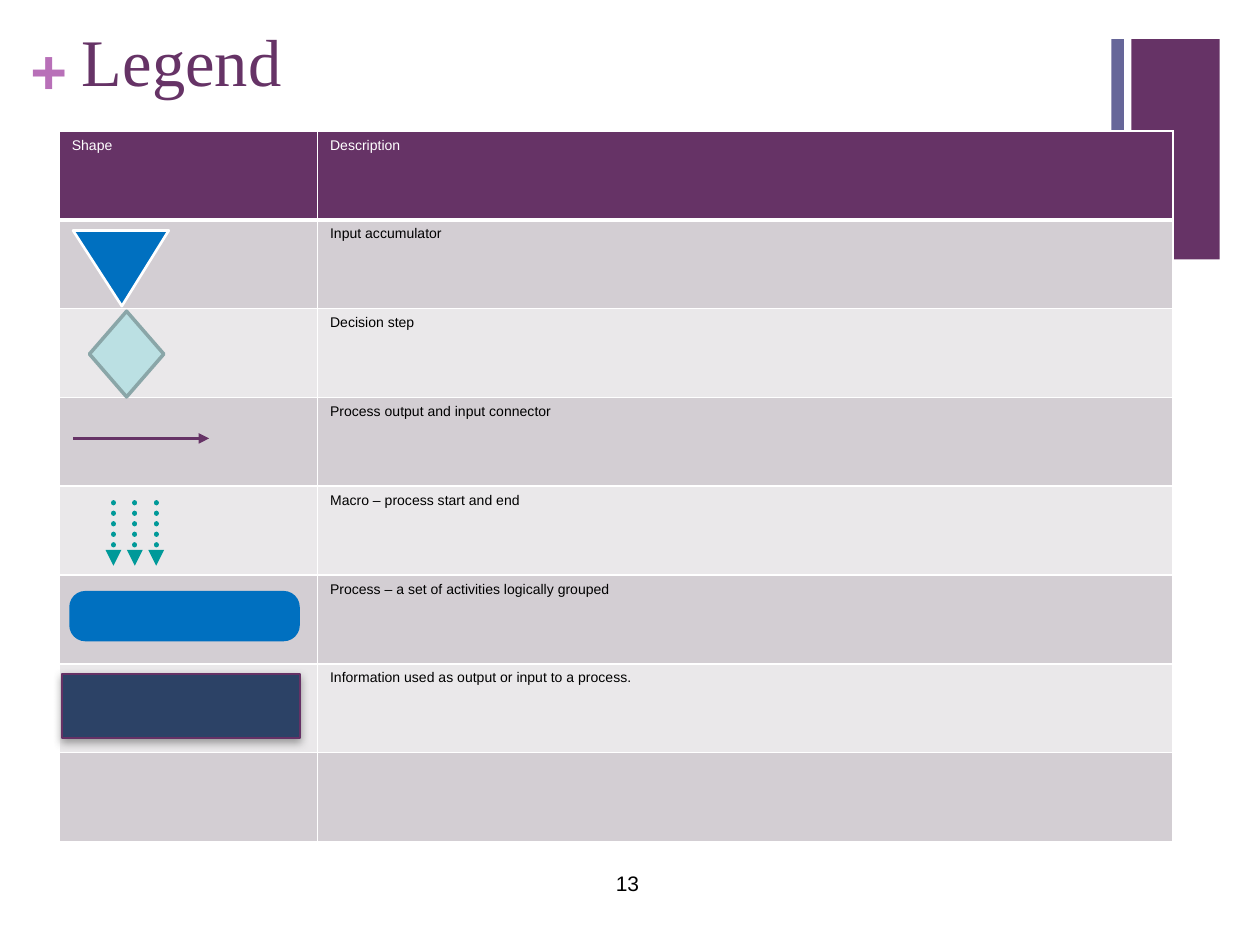
"""Build the legend slide that explains the process map symbols."""
from dataclasses import dataclass
from typing import Optional

from lxml.etree import SubElement
from pptx import Presentation
from pptx.dml.color import RGBColor
from pptx.enum.dml import MSO_LINE
from pptx.enum.shapes import MSO_CONNECTOR as Link, MSO_SHAPE as Kind
from pptx.enum.text import MSO_ANCHOR as Anchor, PP_ALIGN as Align
from pptx.oxml.ns import qn
from pptx.util import Inches, Pt


@dataclass(frozen=True)
class Theme:
    """Colours, fonts and type sizes."""
    plum: str = "663366"
    orchid: str = "B870B8"
    slate: str = "666699"
    blue: str = "0070C0"
    navy: str = "2C4266"
    navy_edge: str = "653165"
    aqua: str = "BBE0E3"
    aqua_edge: str = "8AA6A8"
    teal: str = "009999"
    band_dark: str = "D3CED3"
    band_light: str = "EAE8EA"
    grey: str = "808080"
    white: str = "FFFFFF"
    black: str = "000000"
    serif: str = "Times New Roman"
    sans: str = "Arial"
    title: float = 38
    plus: float = 36
    number: float = 12
    cell: float = 8


T = Theme()


@dataclass(frozen=True)
class Symbol:
    """A filled preset shape."""
    kind: Kind
    box: tuple[float, float, float, float]
    fill: str
    edge: Optional[str] = None
    width: float = 1
    adj: Optional[float] = None
    flip: bool = False
    shadow: bool = False


@dataclass(frozen=True)
class Arrow:
    """A connector with a triangle at its end."""
    kind: Link
    start: tuple[float, float]
    end: tuple[float, float]
    color: str
    width: float
    dotted: bool = False


@dataclass(frozen=True)
class Label:
    """A one-line text box."""
    text: str
    box: tuple[float, float, float, float]
    size: float
    color: str
    inset: tuple[float, float]
    bold: bool = False
    align: Align = Align.LEFT


DECOR = [
    Symbol(Kind.RECTANGLE, (8.98, 0.31, 0.7, 1.75), T.plum),
    Symbol(Kind.RECTANGLE, (8.82, 0.31, 0.1, 1.75), T.slate),
]
LABELS = [
    Label("13", (4.68, 6.86, 0.6, 0.3), T.number, T.black, (0.1, 0.05), align=Align.CENTER),
    Label("+", (0.24, 0.25, 0.28, 0.61), T.plus, T.orchid, (0, 0), bold=True),
]
ROWS = [
    "Input accumulator",
    "Decision step",
    "Process output and input connector",
    "Macro – process start and end",
    "Process – a set of activities logically grouped",
    "Information used as output or input to a process.",
    "",
]
MACRO_ARROWS = [
    Arrow(Link.STRAIGHT, (x, 3.99), (x, 4.49), T.teal, 3, dotted=True)
    for x in (0.9, 1.07, 1.24)
]
SYMBOLS = [
    Symbol(Kind.ISOSCELES_TRIANGLE, (0.58, 1.83, 0.76, 0.6), T.blue, T.white, 1.5, 0.51, flip=True),
    Symbol(Kind.FLOWCHART_DECISION, (0.71, 2.47, 0.59, 0.68), T.aqua, T.aqua_edge, 2),
    Symbol(Kind.RECTANGLE, (0.49, 5.35, 1.89, 0.51), T.navy, T.navy_edge, shadow=True),
    Symbol(Kind.ROUNDED_RECTANGLE, (0.55, 4.69, 1.83, 0.4), T.blue, adj=0.32),
]
FLOW_ARROW = Arrow(Link.ELBOW, (0.58, 3.48), (1.66, 3.48), T.plum, 2)


def inches(values) -> list:
    """Turn numbers into lengths."""
    return [Inches(v) for v in values]


def apply(target, formats: dict) -> None:
    """Set each attribute named in the format values."""
    for name, value in formats.items():
        setattr(target, name, value)


def write(p, text: str, size: float, color: str, font: str = T.sans, bold: bool = False) -> None:
    """Add one formatted run to a paragraph."""
    r = p.add_run()
    r.text = text
    apply(r.font, {"size": Pt(size), "name": font, "bold": bold})
    r.font.color.rgb = RGBColor.from_string(color)


def paint(target, color: str) -> None:
    """Give a shape or cell a solid fill."""
    target.fill.solid()
    target.fill.fore_color.rgb = RGBColor.from_string(color)


def draw_symbol(slide, sym: Symbol) -> None:
    """Draw a preset shape."""
    s = slide.shapes.add_shape(sym.kind, *inches(sym.box))
    s.shadow.inherit = False
    paint(s, sym.fill)
    if sym.edge:
        paint(s.line, sym.edge)
        s.line.width = Pt(sym.width)
    else:
        s.line.fill.background()
    if sym.adj is not None:
        s.adjustments[0] = sym.adj
    sp = s.element.spPr
    if sym.flip:
        sp.find(qn("a:xfrm")).set("flipV", "1")
    if sym.shadow:
        outer = SubElement(sp.find(qn("a:effectLst")), qn("a:outerShdw"), blurRad=str(Pt(5)),
                           dist=str(Pt(2)), dir="5400000", rotWithShape="0")
        color = SubElement(outer, qn("a:srgbClr"), val=T.grey)
        SubElement(color, qn("a:alpha"), val="75000")


def draw_arrow(slide, arrow: Arrow) -> None:
    """Draw a connector that ends in a triangle."""
    s = slide.shapes.add_connector(arrow.kind, *inches(arrow.start + arrow.end))
    paint(s.line, arrow.color)
    s.line.width = Pt(arrow.width)
    sp = s.element.spPr
    ln = sp.find(qn("a:ln"))
    if arrow.dotted:
        s.line.dash_style = MSO_LINE.ROUND_DOT
        ln.set("cap", "rnd")
    SubElement(ln, qn("a:tailEnd"), type="triangle")
    SubElement(sp, qn("a:effectLst"))


def draw_label(slide, label: Label) -> None:
    """Draw a text box."""
    tf = slide.shapes.add_textbox(*inches(label.box)).text_frame
    x, y = inches(label.inset)
    apply(tf, {"word_wrap": True, "margin_left": x, "margin_right": x,
               "margin_top": y, "margin_bottom": y})
    tf.paragraphs[0].alignment = label.align
    write(tf.paragraphs[0], label.text, label.size, label.color, bold=label.bold)


def add_borders(cell, bottom: float) -> None:
    """Draw white borders around a cell."""
    tc = cell._tc.get_or_add_tcPr()
    for i, (side, width) in enumerate({"L": 1, "R": 1, "T": 1, "B": bottom}.items()):
        ln = SubElement(tc, qn(f"a:ln{side}"), w=str(Pt(width)))
        SubElement(SubElement(ln, qn("a:solidFill")), qn("a:srgbClr"), val=T.white)
        tc.insert(i, ln)


def draw_table(slide) -> None:
    """Draw the banded table of symbols and descriptions."""
    rows = [("Shape", "Description")] + [("", text) for text in ROWS]
    box = inches((0.47, 1.04, 8.84, 5.64))
    table = slide.shapes.add_table(len(rows), 2, *box).table
    for col, width in zip(table.columns, inches((2.05, 6.79))):
        col.width = width
    for i, row in enumerate(rows):
        band = T.plum if i == 0 else (T.band_light, T.band_dark)[i % 2]
        for j, text in enumerate(row):
            cell = table.cell(i, j)
            paint(cell, band)
            add_borders(cell, 1 if i else 3)
            if text:
                write(cell.text_frame.paragraphs[0], text, T.cell, T.black if i else T.white)


def draw_title(slide) -> None:
    """Place and format the title."""
    s = slide.shapes.title
    apply(s, dict(zip(("left", "top", "width", "height"), inches((0.55, 0.04, 8.26, 1.22)))))
    apply(s.text_frame, {"vertical_anchor": Anchor.TOP, "margin_top": Inches(0.12)})
    p = s.text_frame.paragraphs[0]
    p.alignment = Align.LEFT
    write(p, "Legend", T.title, T.plum, T.serif)


def main() -> None:
    """Build and save the slide."""
    prs = Presentation()
    prs.slide_width, prs.slide_height = inches((10, 7.5))
    slide = prs.slides.add_slide(prs.slide_layouts[5])
    draw_title(slide)
    for label in LABELS:
        draw_label(slide, label)
    for sym in DECOR:
        draw_symbol(slide, sym)
    draw_table(slide)
    for arrow in MACRO_ARROWS:
        draw_arrow(slide, arrow)
    for sym in SYMBOLS:
        draw_symbol(slide, sym)
    draw_arrow(slide, FLOW_ARROW)
    prs.save("out.pptx")


if __name__ == "__main__":
    main()
